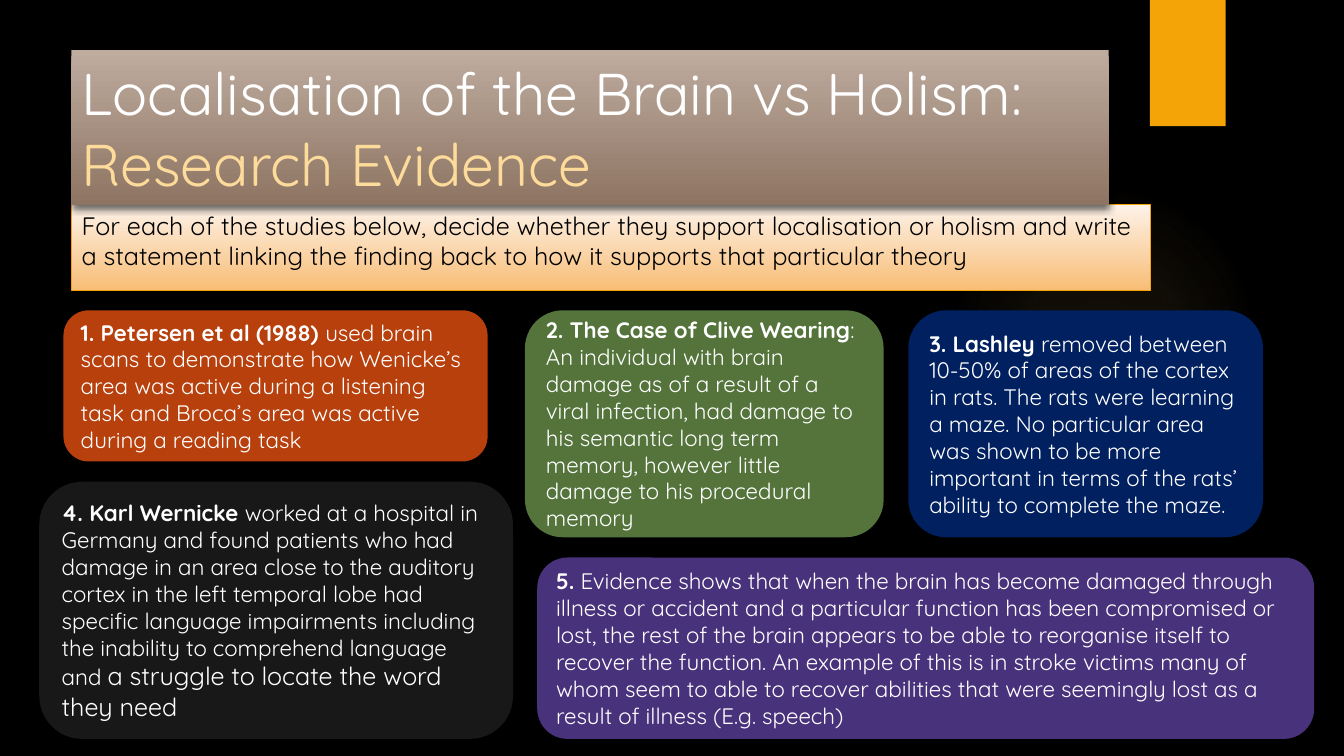
from lxml import etree
from pptx import Presentation
from pptx.dml.color import RGBColor
from pptx.enum.shapes import MSO_SHAPE
from pptx.enum.text import MSO_ANCHOR, MSO_AUTO_SIZE, PP_ALIGN
from pptx.oxml import parse_xml
from pptx.oxml.ns import nsdecls, qn
from pptx.util import Cm, Pt

FONT = "Quicksand"
WHITE = "FFFFFF"
GOLD = "F5A408"
LEFT = PP_ALIGN.LEFT
TOP, MIDDLE = MSO_ANCHOR.TOP, MSO_ANCHOR.MIDDLE
ROUNDED, RECTANGLE, OVAL = (
    MSO_SHAPE.ROUNDED_RECTANGLE, MSO_SHAPE.RECTANGLE, MSO_SHAPE.OVAL)

TITLE = [("Localisation of the Brain vs Holism:", WHITE),
         ("Research Evidence", "FCDB9B")]
TASK = ("For each of the studies below, decide whether they support localisation "
        "or holism and write a statement linking the finding back to how it "
        "supports that particular theory")

# Left, top, width, height in centimetres
TITLE_BOX = (1.8, 1.27, 26.14, 3.89)
TASK_BOX = (1.8, 5.16, 27.2, 2.16)
GLOW_BOX = (23.9, 4.65, 7.82, 7.82)
TAB_BOX = (28.98, 0, 1.91, 3.18)
GLOW_STOPS = [(0, 7), (36, 6), (69, 0)]  # position, opacity in percent

# Box, fill, runs of (text, size, bold)
STUDIES = [
    ((1.6, 7.82, 10.69, 3.81), "B7400D", [
        ("1. Petersen et al (1988) ", 16, True),
        ("used brain scans to demonstrate how Wenicke’s area was active during a "
         "listening task and Broca’s area was active during a reading task",
         16, False)]),
    ((13.23, 7.82, 9.04, 5.72), "54743B", [
        ("2. The Case of Clive Wearing", 16, True),
        (": An individual with brain damage as of a result of a viral infection, "
         "had damage to his semantic long term memory, however little damage to "
         "his procedural memory", 16, False)]),
    ((22.89, 7.82, 8.94, 5.72), "002060", [
        ("3. Lashley ", 16, True),
        ("removed between 10-50% of areas of the cortex in rats. The rats were "
         "learning a maze. No particular area was shown to be more important in "
         "terms of the rats’ ability to complete the maze.", 16, False)]),
    ((0.99, 12.14, 11.94, 6.48), "181818", [
        ("4. Karl Wernicke ", 16, True),
        ("worked at a hospital in Germany and found patients who had damage in an "
         "area close to the auditory cortex in the left temporal lobe had specific "
         "language impairments including the inability to comprehend language and ",
         16, False),
        ("a struggle to locate the word they need", 18, False)]),
    ((13.54, 14.05, 19.58, 4.57), "49327C", [
        ("5.", 16, True),
        (" Evidence shows that when the brain has become damaged through illness or "
         "accident and a particular function has been compromised or lost, the rest "
         "of the brain appears to be able to reorganise itself to recover the "
         "function. An example of this is in stroke victims many of whom seem to "
         "able to recover abilities that were seemingly lost as a result of illness "
         "(E.g. speech)", 16, False)]),
]


def rgb(value):
    return RGBColor.from_string(value)


def place(shape, box):
    shape.left, shape.top, shape.width, shape.height = map(Cm, box)


def add_shape(page, kind, box, color):
    shape = page.shapes.add_shape(kind, *map(Cm, box))
    shape.shadow.inherit = False
    shape.fill.solid()
    shape.fill.fore_color.rgb = rgb(color)
    shape.line.fill.background()
    return shape


def fade_down(shape, *colors):
    """Fill with a two-colour gradient running from top to bottom."""
    shape.fill.gradient()
    shape.fill.gradient_angle = 270
    for stop, color in zip(shape.fill.gradient_stops, colors):
        stop.color.rgb = rgb(color)


def make_glow(shape, color):
    """Swap the fill for a circular gradient that fades out."""
    stops = "".join(
        f'<a:gs pos="{position * 1000}"><a:srgbClr val="{color}">'
        f'<a:alpha val="{opacity * 1000}"/></a:srgbClr></a:gs>'
        for position, opacity in GLOW_STOPS)
    gradient = parse_xml(
        f'<a:gradFill {nsdecls("a")}><a:gsLst>{stops}</a:gsLst><a:path path="circle">'
        '<a:fillToRect l="50000" t="50000" r="50000" b="50000"/></a:path></a:gradFill>')
    properties = shape._element.spPr
    properties.replace(properties.find(qn("a:solidFill")), gradient)


def drop_shadow(shape):
    shape.shadow.inherit = False
    effects = shape._element.spPr.find(qn("a:effectLst"))
    effects.append(parse_xml(
        f'<a:outerShdw {nsdecls("a")} blurRad="{Pt(5)}" dist="{Pt(3)}" dir="5400000" '
        'rotWithShape="0"><a:srgbClr val="000000"><a:alpha val="60000"/></a:srgbClr>'
        '</a:outerShdw>'))


def first_paragraph(shape, anchor, size=None, color=WHITE):
    frame = shape.text_frame
    frame.word_wrap = True
    frame.auto_size = MSO_AUTO_SIZE.NONE
    frame.vertical_anchor = anchor
    para = frame.paragraphs[0]
    para.alignment = LEFT
    para.space_before = Pt(0)
    para.font.name = FONT
    para.font.color.rgb = rgb(color)
    if size:
        para.font.size = Pt(size)
    return para


def fill_title(title):
    place(title, TITLE_BOX)
    fade_down(title, "BEAC9F", "8E7463")
    drop_shadow(title)
    para = first_paragraph(title, MIDDLE, 42)
    for number, (text, color) in enumerate(TITLE):
        if number:
            para.add_line_break()
        span = para.add_run()
        span.text = text
        span.font.color.rgb = rgb(color)


def fill_task(task):
    place(task, TASK_BOX)
    fade_down(task, "FDF2E9", "F8BD75")
    task.line.color.rgb = rgb(GOLD)
    task.line.width = Pt(0.75)
    properties = task.text_frame.paragraphs[0]._p.get_or_add_pPr()
    properties.set("marL", "0")
    properties.set("indent", "0")
    etree.SubElement(properties, qn("a:buNone"))
    first_paragraph(task, TOP, 18, "000000").add_run().text = TASK


def add_study(page, box, color, runs):
    card = add_shape(page, ROUNDED, box, color)
    para = first_paragraph(card, MIDDLE)
    for text, size, bold in runs:
        span = para.add_run()
        span.text = text
        span.font.size = Pt(size)
        span.font.bold = bold


def main():
    deck = Presentation()
    deck.slide_width, deck.slide_height = Cm(33.87), Cm(19.05)
    page = deck.slides.add_slide(deck.slide_layouts[1])
    page.background.fill.solid()
    page.background.fill.fore_color.rgb = rgb("000000")

    make_glow(add_shape(page, OVAL, GLOW_BOX, GOLD), "FAC96A")
    add_shape(page, RECTANGLE, TAB_BOX, GOLD)

    title, task = page.shapes.title, page.placeholders[1]
    fill_title(title)
    fill_task(task)
    # The title lies over the task box so that its shadow falls on it
    for holder in (task, title):
        page.shapes._spTree.append(holder._element)

    for study in STUDIES:
        add_study(page, *study)
    deck.save("out.pptx")


if __name__ == "__main__":
    main()
